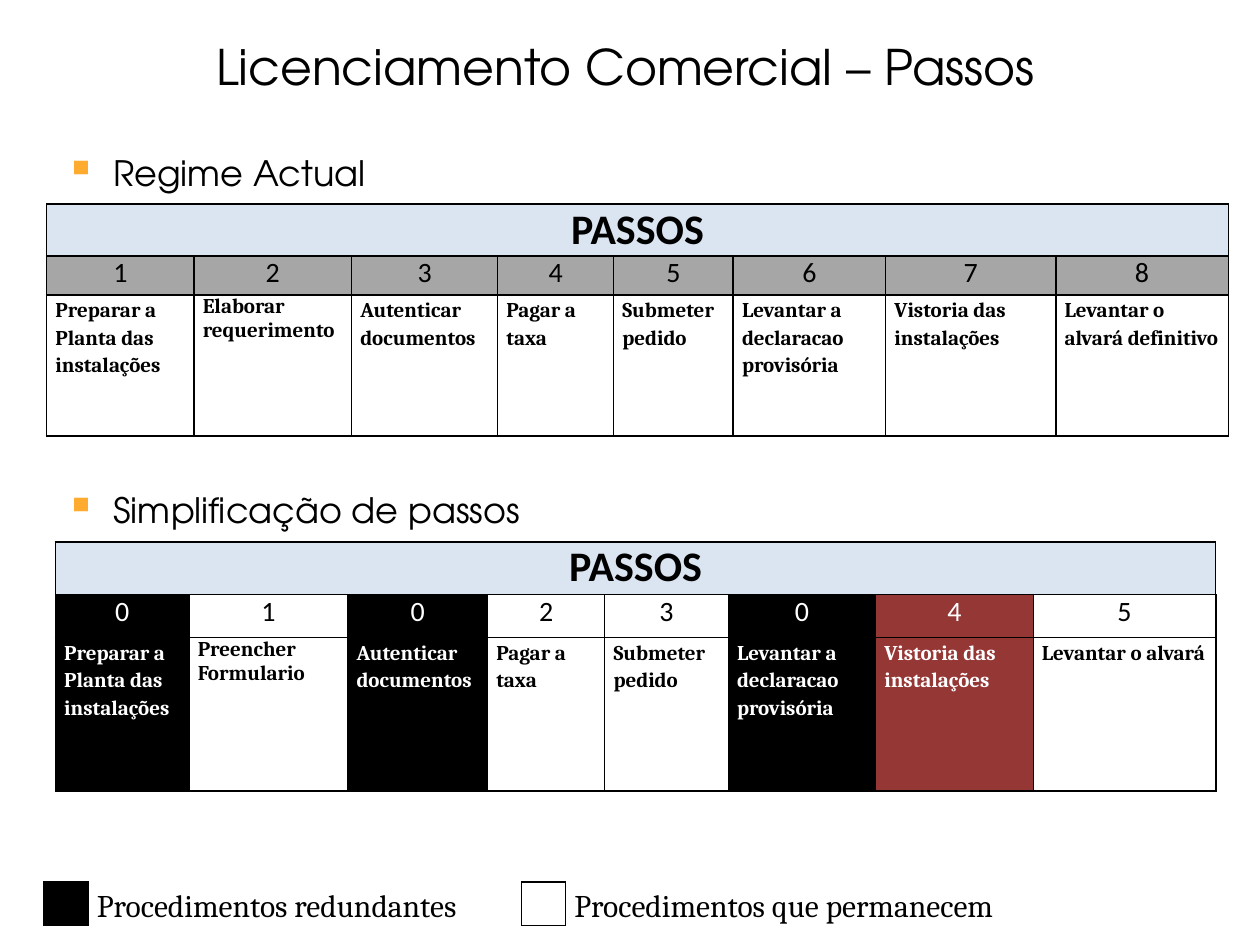
from lxml.etree import SubElement
from pptx import Presentation
from pptx.dml.color import RGBColor
from pptx.enum.text import MSO_ANCHOR as Anchor, PP_ALIGN as Align
from pptx.oxml.ns import qn
from pptx.util import Inches, Pt

THEME = {
    "black": "000000", "white": "FFFFFF", "header": "DBE5F1", "grey": "A6A6A6",
    "red": "953735", "bullet": "FFAB2F",
    "heading_font": "TeX Gyre Adventor", "number_font": "Calibri", "step_font": "Cambria",
    "title": 28, "heading": 20, "passos": 24, "number": 16, "step": 12, "legend": 18,
}
TITLE = "Licenciamento Comercial – Passos"
HEADER = "PASSOS"
SINGLE_SPACED = 1
REGIMES = [
    {
        "heading": "Regime Actual", "heading_top": 1.15,
        "at": (0.37, 1.62), "rows": (0.41, 0.31, 1.12), "inner": 1,
        "steps": [
            (1.17, "1", "Preparar a Planta das instalações", "grey", None),
            (1.25, "2", "Elaborar requerimento", "grey", None),
            (1.16, "3", "Autenticar documentos", "grey", None),
            (0.92, "4", "Pagar a taxa", "grey", None),
            (0.95, "5", "Submeter pedido", "grey", None),
            (1.21, "6", "Levantar a declaracao provisória", "grey", None),
            (1.35, "7", "Vistoria das instalações", "grey", None),
            (1.37, "8", "Levantar o alvará definitivo", "grey", None),
        ],
    },
    {
        "heading": "Simplificação de passos", "heading_top": 3.83,
        "at": (0.44, 4.3), "rows": (0.42, 0.34, 1.22), "inner": 0.5,
        "steps": [
            (1.06, "0", "Preparar a Planta das instalações", "black", "black"),
            (1.26, "1", "Preencher Formulario", "white", "white"),
            (1.11, "0", "Autenticar documentos", "black", "black"),
            (0.93, "2", "Pagar a taxa", "white", "white"),
            (0.98, "3", "Submeter pedido", "white", "white"),
            (1.17, "0", "Levantar a declaracao provisória", "black", "black"),
            (1.25, "4", "Vistoria das instalações", "red", "red"),
            (1.45, "5", "Levantar o alvará", "white", "white"),
        ],
    },
]
LEGEND_AT, LEGEND_HEIGHT = (0.35, 7), 0.34
LEGEND = [
    (0.35, "", "black", "LRTB"),
    (3.44, "Procedimentos redundantes", None, "LR"),
    (0.35, "", None, "LRTB"),
    (4.07, "Procedimentos que permanecem", None, "L"),
]


def color(name):
    return RGBColor.from_string(THEME[name])


def write(frame, text, font, size, ink="black", bold=False, align=Align.LEFT):
    frame.word_wrap = True
    paragraph = frame.paragraphs[0]
    paragraph.text = text
    paragraph.alignment = align
    paragraph.font.name = THEME[font]
    paragraph.font.size = Pt(THEME[size])
    paragraph.font.bold = bold
    paragraph.font.color.rgb = color(ink)
    return paragraph


def add_text(slide, box, text, size, **style):
    frame = slide.shapes.add_textbox(*map(Inches, box)).text_frame
    return frame, write(frame, text, "heading_font", size, **style)


def add_heading(slide, text, top):
    _, paragraph = add_text(slide, (0.42, top, 9.08, 0.64), text, "heading")
    paragraph.space_before = Pt(12)
    properties = paragraph._p.get_or_add_pPr()
    properties.set("marL", str(Inches(0.38)))
    properties.set("indent", str(-Inches(0.38)))
    bullet_color = SubElement(properties, qn("a:buClr"))
    SubElement(bullet_color, qn("a:srgbClr"), val=THEME["bullet"])
    SubElement(properties, qn("a:buSzPct"), val="120000")
    SubElement(properties, qn("a:buChar"), char="▪")


def add_grid(slide, at, widths, heights):
    size = sum(widths), sum(heights)
    table = slide.shapes.add_table(len(heights), len(widths), *map(Inches, at + size)).table
    table.first_row = table.horz_banding = False
    for column, width in zip(table.columns, widths):
        column.width = Inches(width)
    for row, height in zip(table.rows, heights):
        row.height = Inches(height)
    return table


def dress(cell, fill, borders):
    cell.margin_left = cell.margin_right = Inches(0.07)
    cell.margin_top = cell.margin_bottom = 0
    properties = cell._tc.get_or_add_tcPr()
    for side in "LRTB":
        if side in borders:
            line = SubElement(properties, qn(f"a:ln{side}"), w=str(Pt(borders[side])))
            ink = SubElement(line, qn("a:solidFill"))
            SubElement(ink, qn("a:srgbClr"), val=THEME["black"])
    if fill:
        cell.fill.solid()
        cell.fill.fore_color.rgb = color(fill)
    else:
        cell.fill.background()


def add_regime(slide, regime):
    add_heading(slide, regime["heading"], regime["heading_top"])
    steps, heights, inner = regime["steps"], regime["rows"], regime["inner"]
    table = add_grid(slide, regime["at"], [step[0] for step in steps], heights)
    last_row, last_column = len(heights) - 1, len(steps) - 1
    for column, (_, number, step, number_fill, step_fill) in enumerate(steps):
        for row, fill in enumerate(("header", number_fill, step_fill)):
            dress(table.cell(row, column), fill, {
                "L": inner if column else 1, "R": inner if column < last_column else 1,
                "T": inner if row else 1, "B": inner if row < last_row else 1,
            })
        write(table.cell(1, column).text_frame, number, "number_font", "number",
              "white" if number_fill in ("black", "red") else "black", align=Align.CENTER)
        paragraph = write(table.cell(2, column).text_frame, step, "step_font", "step",
                          "white" if step_fill in ("black", "red") else "black", bold=True)
        if column != SINGLE_SPACED:
            paragraph.line_spacing = 1.15
            paragraph.space_after = Pt(10)
    table.cell(0, 0).merge(table.cell(0, last_column))
    write(table.cell(0, 0).text_frame, HEADER, "number_font", "passos",
          bold=True, align=Align.CENTER)


def add_legend(slide):
    table = add_grid(slide, LEGEND_AT, [entry[0] for entry in LEGEND], [LEGEND_HEIGHT])
    for cell, (_, label, fill, sides) in zip(table.rows[0].cells, LEGEND):
        dress(cell, fill, dict.fromkeys(sides, 1))
        cell.vertical_anchor = Anchor.BOTTOM
        if label:
            write(cell.text_frame, label, "step_font", "legend").line_spacing = 1.15


def main():
    """Build the slide comparing the licensing steps of both regimes."""
    deck = Presentation()
    deck.slide_width, deck.slide_height = Inches(10), Inches(7.5)
    slide = deck.slides.add_slide(deck.slide_layouts[6])
    frame, _ = add_text(slide, (0.36, 0.18, 9.21, 0.69), TITLE, "title", align=Align.CENTER)
    frame.vertical_anchor = Anchor.MIDDLE
    for regime in REGIMES:
        add_regime(slide, regime)
    add_legend(slide)
    deck.save("out.pptx")


if __name__ == "__main__":
    main()
